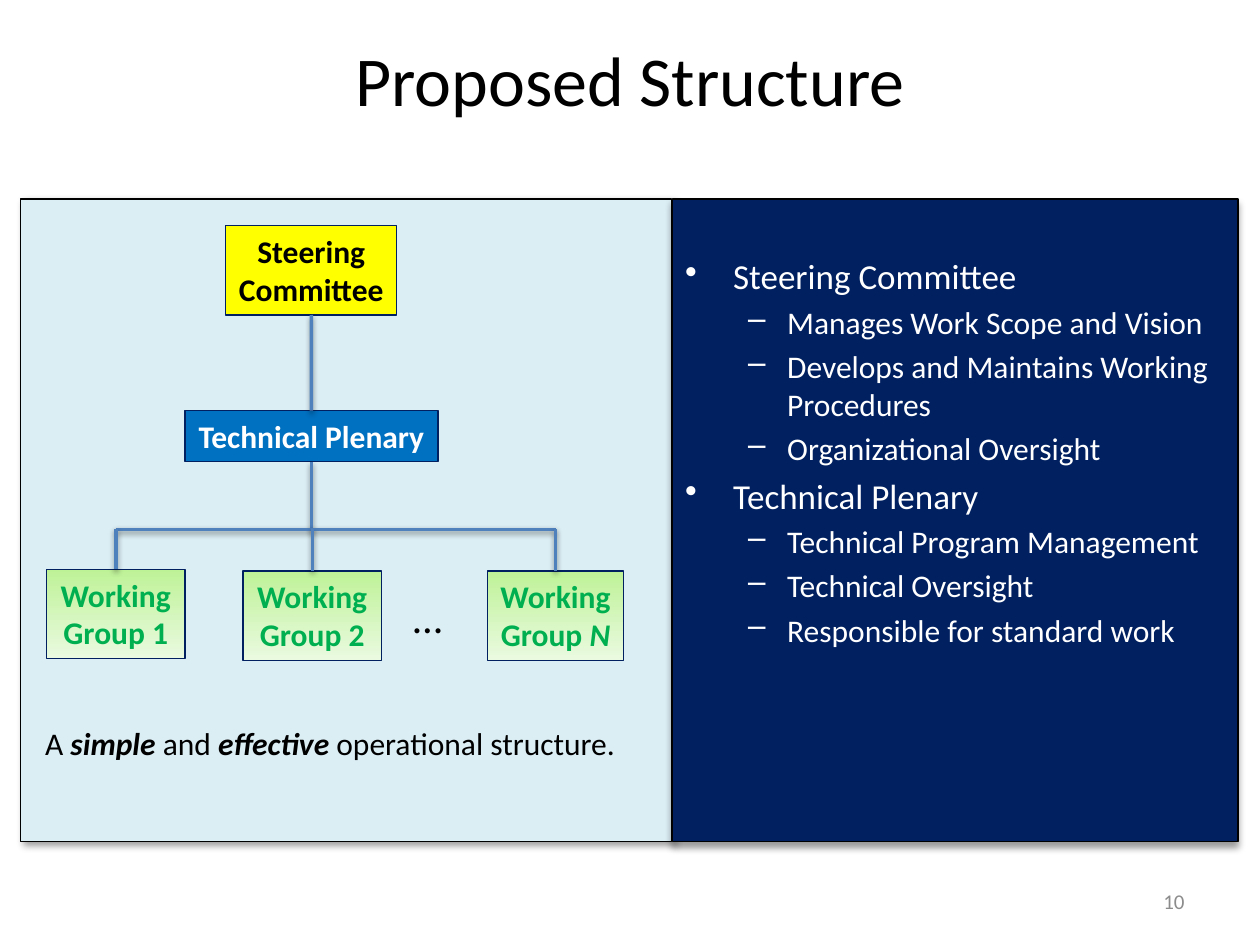
"""Build the Proposed Structure slide: an organisation chart beside a list of duties."""
from lxml.etree import SubElement
from pptx import Presentation
from pptx.dml.color import RGBColor
from pptx.enum.shapes import MSO_CONNECTOR, MSO_SHAPE
from pptx.enum.text import MSO_ANCHOR, MSO_AUTO_SIZE, PP_ALIGN
from pptx.oxml.ns import qn
from pptx.util import Cm, Pt

COLORS = {
    "black": "000000", "white": "FFFFFF", "pale": "DBEEF4", "navy": "002060",
    "yellow": "FFFF00", "blue": "0070C0", "green": "00B050", "link": "4F81BD",
    "lime": "BEF297", "mint": "EAFAE0", "gray": "8C8C8C",
}
RGB = {name: RGBColor.from_string(value) for name, value in COLORS.items()}


def style(paragraph, size, color, align=PP_ALIGN.LEFT, bold=False):
    paragraph.alignment = align
    paragraph.font.name = "Calibri"
    paragraph.font.size = Pt(size)
    paragraph.font.bold = bold
    paragraph.font.color.rgb = RGB[color]


def cast_shadow(shape, alpha, blur, distance, angle):
    effects = SubElement(shape._element.spPr, qn("a:effectLst"))
    outer = SubElement(effects, qn("a:outerShdw"), blurRad=str(Pt(blur)), dist=str(Pt(distance)),
                       dir=str(angle * 60000), algn="ctr", rotWithShape="0")
    tint = SubElement(outer, qn("a:srgbClr"), val=COLORS["black"])
    SubElement(tint, qn("a:alpha"), val=str(alpha * 1000))


presentation = Presentation()
presentation.slide_width, presentation.slide_height = Cm(25.4), Cm(19.05)
slide = presentation.slides.add_slide(presentation.slide_layouts[6])
shapes = slide.shapes

panels = []
for left, width, color, angle in [(0.41, 13.13, "pale", 45), (13.56, 11.4, "navy", 90)]:
    panel = shapes.add_shape(MSO_SHAPE.RECTANGLE, Cm(left), Cm(4.01), Cm(width), Cm(12.95))
    panel.fill.solid()
    panel.fill.fore_color.rgb = RGB[color]
    panel.line.color.rgb = RGB["black"]
    panel.line.width = Pt(0.75)
    cast_shadow(panel, 40, 4, 3, angle)
    panels.append(panel)

duties = [
    (0, "Steering Committee"),
    (1, "Manages Work Scope and Vision"),
    (1, "Develops and Maintains Working Procedures"),
    (1, "Organizational Oversight"),
    (0, "Technical Plenary"),
    (1, "Technical Program Management"),
    (1, "Technical Oversight"),
    (1, "Responsible for standard work"),
]
levels = [("•", 20, 0.97, 0.97), ("–", 18, 2.06, 0.79)]
duty_frame = panels[1].text_frame
duty_frame.word_wrap = True
duty_frame.vertical_anchor = MSO_ANCHOR.TOP
duty_frame.margin_top = Cm(1.13)
for index, (level, duty) in enumerate(duties):
    bullet, size, indent, hanging = levels[level]
    paragraph = duty_frame.add_paragraph() if index else duty_frame.paragraphs[0]
    paragraph.text = duty
    paragraph.level = level
    paragraph.space_before = Pt(size * 0.2 if index else 0)
    properties = paragraph._p.get_or_add_pPr()
    properties.set("marL", str(Cm(indent)))
    properties.set("indent", str(-Cm(hanging)))
    SubElement(properties, qn("a:buChar"), char=bullet)
    style(paragraph, size, "white")

bodies = [
    ([["Steering"], ["Committee"]], 4.55, 4.55, 3.45, 1.8, "yellow", "black"),
    ([["Technical Plenary"]], 3.73, 8.28, 5.1, 1.03, "blue", "white"),
    ([["Working"], ["Group 1"]], 0.94, 11.48, 2.79, 1.8, None, "green"),
    ([["Working"], ["Group 2"]], 4.9, 11.51, 2.79, 1.8, None, "green"),
    ([["Working"], ["Group ", "N"]], 9.83, 11.51, 2.74, 1.8, None, "green"),
]
boxes = []
for lines, left, top, width, height, color, text_color in bodies:
    box = shapes.add_shape(MSO_SHAPE.RECTANGLE, Cm(left), Cm(top), Cm(width), Cm(height))
    box.shadow.inherit = False
    box.line.color.rgb = RGB["navy"]
    box.line.width = Pt(0.75)
    if color:
        box.fill.solid()
        box.fill.fore_color.rgb = RGB[color]
    else:
        box.fill.gradient()
        box.fill.gradient_angle = 270
        for stop, shade in zip(box.fill.gradient_stops, ("lime", "mint")):
            stop.color.rgb = RGB[shade]
    frame = box.text_frame
    frame.word_wrap = False
    frame.auto_size = MSO_AUTO_SIZE.SHAPE_TO_FIT_TEXT
    frame.vertical_anchor = MSO_ANCHOR.TOP
    for index, pieces in enumerate(lines):
        paragraph = frame.add_paragraph() if index else frame.paragraphs[0]
        for piece in pieces:
            run = paragraph.add_run()
            run.text = piece
            if piece == "N":
                run.font.italic = True
        style(paragraph, 18, text_color, PP_ALIGN.CENTER, True)
    boxes.append(box)

steering, plenary, *groups = boxes
first, middle, last = [group.left + group.width // 2 for group in groups]
trunk = plenary.left + plenary.width // 2
bus = Cm(10.67)
links = [
    (steering, trunk, 0, plenary, trunk, 0),
    (plenary, trunk, 0, None, trunk, bus),
    (None, first, bus, None, trunk, bus),
    (None, trunk, bus, None, last, bus),
]
links += [(None, x, bus, group, x, 0) for x, group in zip((first, middle, last), groups)]
for source, x1, y1, target, x2, y2 in links:
    link = shapes.add_connector(MSO_CONNECTOR.STRAIGHT, x1, y1, x2, y2)
    if source:
        link.begin_connect(source, 2)
    if target:
        link.end_connect(target, 0)
    link.line.color.rgb = RGB["link"]
    link.line.width = Pt(2)
    cast_shadow(link, 38, 3.1, 1.6, 90)

emphasised = ("simple", "effective")
labels = [
    (["Proposed Structure"], 1.27, 0, 22.86, 3.18, 40, "black", PP_ALIGN.CENTER, MSO_ANCHOR.MIDDLE, True),
    (["A ", "simple", " and ", "effective", " operational structure."],
     0.66, 14.48, 12.17, 1.03, 18, "black", PP_ALIGN.LEFT, MSO_ANCHOR.TOP, False),
    (["…"], 8.08, 11.79, 1.12, 1.28, 24, "black", PP_ALIGN.LEFT, MSO_ANCHOR.TOP, False),
    (["10"], 18.21, 17.65, 5.92, 1.02, 12, "gray", PP_ALIGN.RIGHT, MSO_ANCHOR.MIDDLE, True),
]
for pieces, left, top, width, height, size, color, align, anchor, wrap in labels:
    label = shapes.add_textbox(Cm(left), Cm(top), Cm(width), Cm(height))
    label.text_frame.word_wrap = wrap
    label.text_frame.vertical_anchor = anchor
    paragraph = label.text_frame.paragraphs[0]
    for piece in pieces:
        run = paragraph.add_run()
        run.text = piece
        if piece in emphasised:
            run.font.bold = run.font.italic = True
    style(paragraph, size, color, align)

presentation.save("out.pptx")
